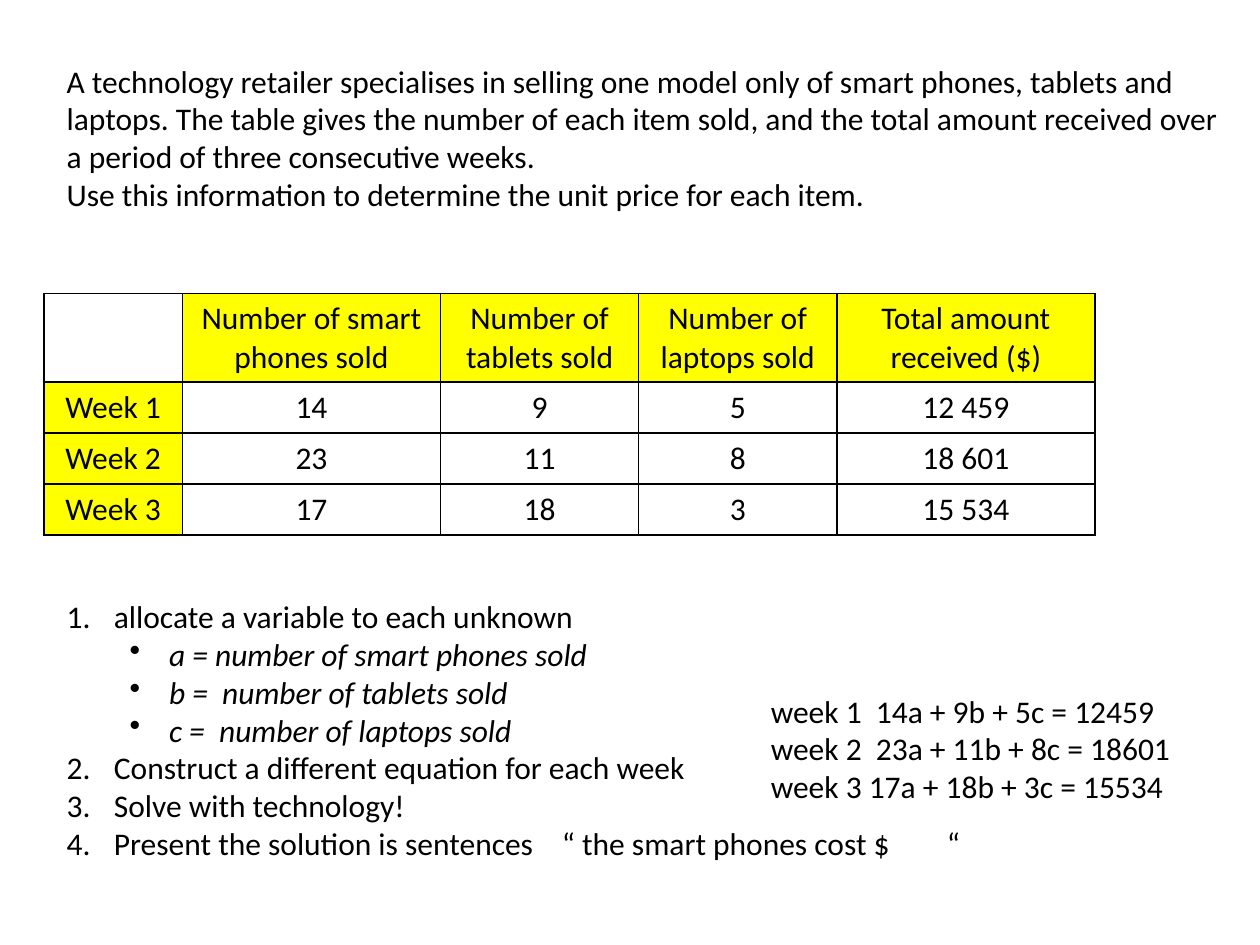
from dataclasses import dataclass

from lxml.etree import SubElement
from pptx import Presentation
from pptx.dml.color import RGBColor
from pptx.enum.text import MSO_ANCHOR, MSO_AUTO_SIZE, PP_ALIGN
from pptx.oxml.ns import qn
from pptx.util import Pt


@dataclass(frozen=True)
class Theme:
    font: str = "Calibri"
    size: float = 18
    ink: str = "000000"
    mark: str = "FFFF00"
    line: float = 1


THEME = Theme()

INTRO = [
    "A technology retailer specialises in selling one model only of smart phones, "
    "tablets and laptops. The table gives the number of each item sold, and the "
    "total amount received over a period of three consecutive weeks.",
    "Use this information to determine the unit price for each item.",
]
SALES = [
    ["", "Number of smart phones sold", "Number of tablets sold",
     "Number of laptops sold", "Total amount received ($)"],
    ["Week 1", "14", "9", "5", "12 459"],
    ["Week 2", "23", "11", "8", "18 601"],
    ["Week 3", "17", "18", "3", "15 534"],
]
WIDTHS = [79, 147.6, 113.2, 113.2, 147.6]
HEIGHTS = [50.4, 29.2, 29.2, 29.2]
FIRST = "allocate a variable to each unknown"
NAMES = [
    "a = number of smart phones sold",
    "b =  number of tablets sold",
    "c =  number of laptops sold",
]
STEPS = [
    ["Construct a different equation for each week"],
    ["Solve with technology!"],
    ["Present the solution is sentences", 12.2, "“ the smart phones cost $", 28.5, "“"],
]
SUMS = [
    "week 1  14a + 9b + 5c = 12459",
    "week 2  23a + 11b + 8c = 18601",
    "week 3 17a + 18b + 3c = 15534",
]


def add_run(para, text, italic=False):
    run = para.add_run()
    run.text = text
    run.font.name = THEME.font
    run.font.size = Pt(THEME.size)
    run.font.italic = italic
    run.font.color.rgb = RGBColor.from_string(THEME.ink)
    return run


def add_gap(para, extra):
    run = add_run(para, " ")
    run.font._element.set("spc", str(round(extra * 100)))


def add_box(slide, left, top, width, height):
    frame = slide.shapes.add_textbox(Pt(left), Pt(top), Pt(width), Pt(height)).text_frame
    frame.word_wrap = True
    frame.auto_size = MSO_AUTO_SIZE.SHAPE_TO_FIT_TEXT
    return frame


def next_para(frame):
    last = frame.paragraphs[-1]
    return frame.add_paragraph() if last.runs else last


def add_lines(frame, lines):
    for line in lines:
        add_run(next_para(frame), line)


def set_list(para, left, hang, tag, **attrs):
    props = para._p.get_or_add_pPr()
    props.set("marL", str(Pt(left)))
    props.set("indent", str(-Pt(hang)))
    SubElement(props, qn(tag), attrs)


def add_step(frame, parts, start):
    para = next_para(frame)
    set_list(para, 27, 27, "a:buAutoNum", type="arabicPeriod", startAt=str(start))
    for part in parts:
        if isinstance(part, str):
            add_run(para, part)
        else:
            add_gap(para, part)


def add_point(frame, text):
    para = next_para(frame)
    para.level = 1
    set_list(para, 58.5, 22.5, "a:buChar", char="•")
    add_run(para, text, italic=True)


def set_edges(cell):
    props = cell._tc.get_or_add_tcPr()
    for spot, side in enumerate(("lnL", "lnR", "lnT", "lnB")):
        edge = props.makeelement(qn("a:" + side), {"w": str(Pt(THEME.line))})
        fill = SubElement(edge, qn("a:solidFill"))
        SubElement(fill, qn("a:srgbClr"), val=THEME.ink)
        props.insert(spot, edge)


def fill_cell(cell, text, marked):
    cell.vertical_anchor = MSO_ANCHOR.MIDDLE
    if marked:
        cell.fill.solid()
        cell.fill.fore_color.rgb = RGBColor.from_string(THEME.mark)
    else:
        cell.fill.background()
    set_edges(cell)
    if text:
        para = cell.text_frame.paragraphs[0]
        para.alignment = PP_ALIGN.CENTER
        add_run(para, text)


def add_grid(slide, left, top, data):
    table = slide.shapes.add_table(
        len(data), len(data[0]), Pt(left), Pt(top), Pt(sum(WIDTHS)), Pt(sum(HEIGHTS))
    ).table
    for col, width in zip(table.columns, WIDTHS):
        col.width = Pt(width)
    for row, height in zip(table.rows, HEIGHTS):
        row.height = Pt(height)
    for r, row in enumerate(data):
        for c, text in enumerate(row):
            fill_cell(table.cell(r, c), text, (r == 0) != (c == 0))


def main():
    deck = Presentation()
    deck.slide_width, deck.slide_height = Pt(720), Pt(540)
    slide = deck.slides.add_slide(deck.slide_layouts[6])

    add_lines(add_box(slide, 31, 31.7, 674.6, 94.3), INTRO)
    add_grid(slide, 25.2, 167.8, SALES)

    steps = add_box(slide, 31, 337.7, 532.8, 159.8)
    add_step(steps, [FIRST], 1)
    for name in NAMES:
        add_point(steps, name)
    for parts in STEPS:
        add_step(steps, parts, 2)

    add_lines(add_box(slide, 433.4, 391.7, 249.1, 72.7), SUMS)
    deck.save("out.pptx")


if __name__ == "__main__":
    main()
